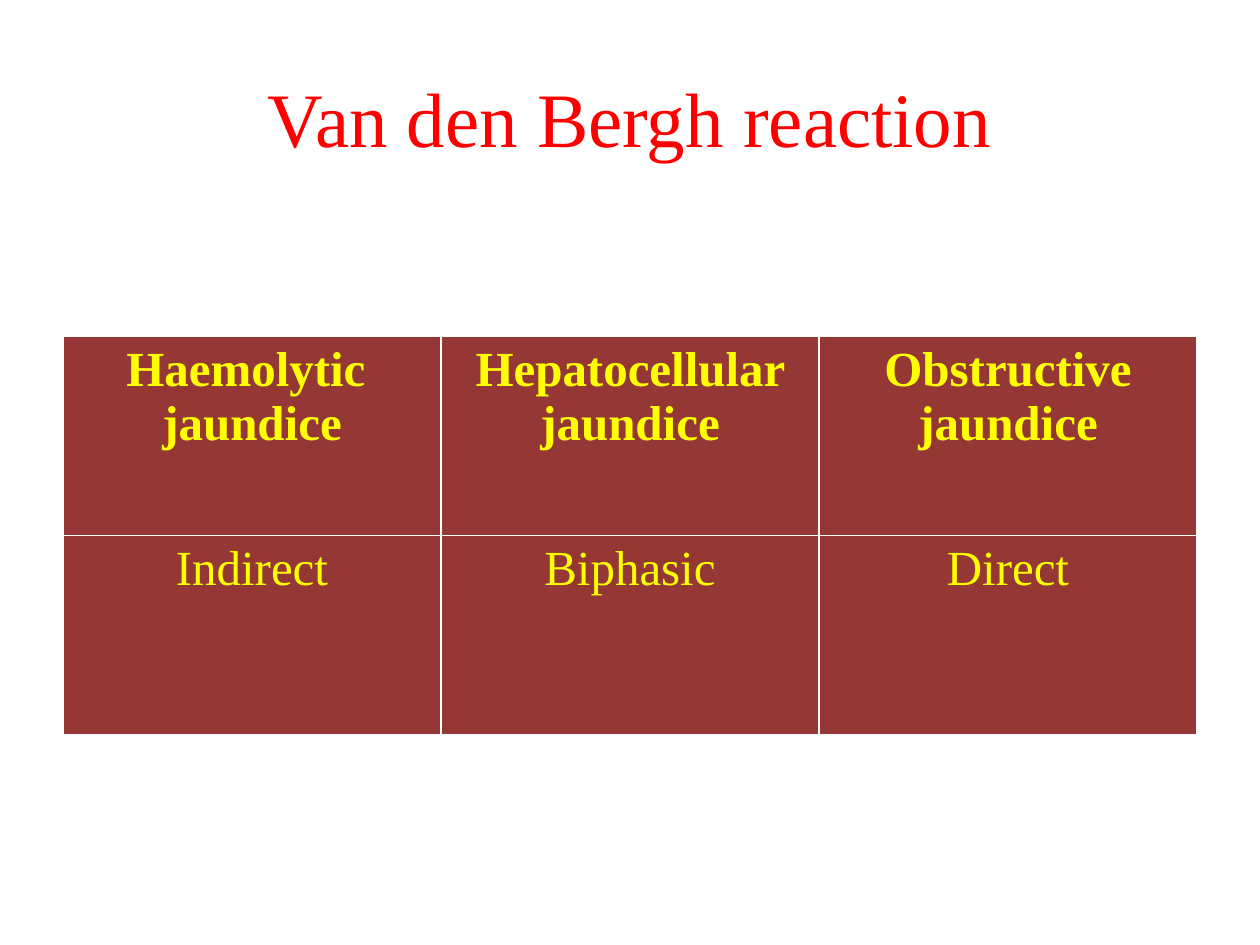
from pptx import Presentation
from pptx import util as u
from pptx.dml.color import RGBColor
from pptx.enum import text

HEADING = "Van den Bergh reaction"
REACTIONS = [
    ("Haemolytic  jaundice", "Hepatocellular jaundice", "Obstructive jaundice"),
    ("Indirect", "Biphasic", "Direct"),
]

FONT = "Times New Roman"
RED = RGBColor(0xFF, 0x00, 0x00)
YELLOW = RGBColor(0xFF, 0xFF, 0x00)
MAROON = RGBColor(0x95, 0x37, 0x35)

MARGIN = u.Cm(1.27)
COLUMN_WIDTH = u.Cm(7.62)
ROW_HEIGHT = u.Cm(4.02)


def write(frame, words, size, color, bold=False):
    frame.text = words
    for paragraph in frame.paragraphs:
        paragraph.alignment = text.PP_ALIGN.CENTER
        for run in paragraph.runs:
            run.font.name = FONT
            run.font.size = u.Pt(size)
            run.font.bold = bold
            run.font.color.rgb = color


deck = Presentation()
deck.slide_width, deck.slide_height = u.Cm(25.4), u.Cm(19.05)
slide = deck.slides.add_slide(deck.slide_layouts.get_by_name("Title Only"))

column_count, row_count = len(REACTIONS[0]), len(REACTIONS)
content_width = COLUMN_WIDTH * column_count

heading = slide.shapes.title
heading.left, heading.top = MARGIN, u.Cm(0.76)
heading.width, heading.height = content_width, u.Cm(3.18)
heading.text_frame.vertical_anchor = text.MSO_ANCHOR.MIDDLE
write(heading.text_frame, HEADING, 44, RED)

reactions = slide.shapes.add_table(
    row_count, column_count, MARGIN, u.Cm(6.78),
    content_width, ROW_HEIGHT * row_count,
).table
for column in reactions.columns:
    column.width = COLUMN_WIDTH
for row_index, entries in enumerate(REACTIONS):
    reactions.rows[row_index].height = ROW_HEIGHT
    for column_index, entry in enumerate(entries):
        cell = reactions.cell(row_index, column_index)
        cell.fill.solid()
        cell.fill.fore_color.rgb = MAROON
        write(cell.text_frame, entry, 28, YELLOW, bold=row_index == 0)

deck.save("out.pptx")
